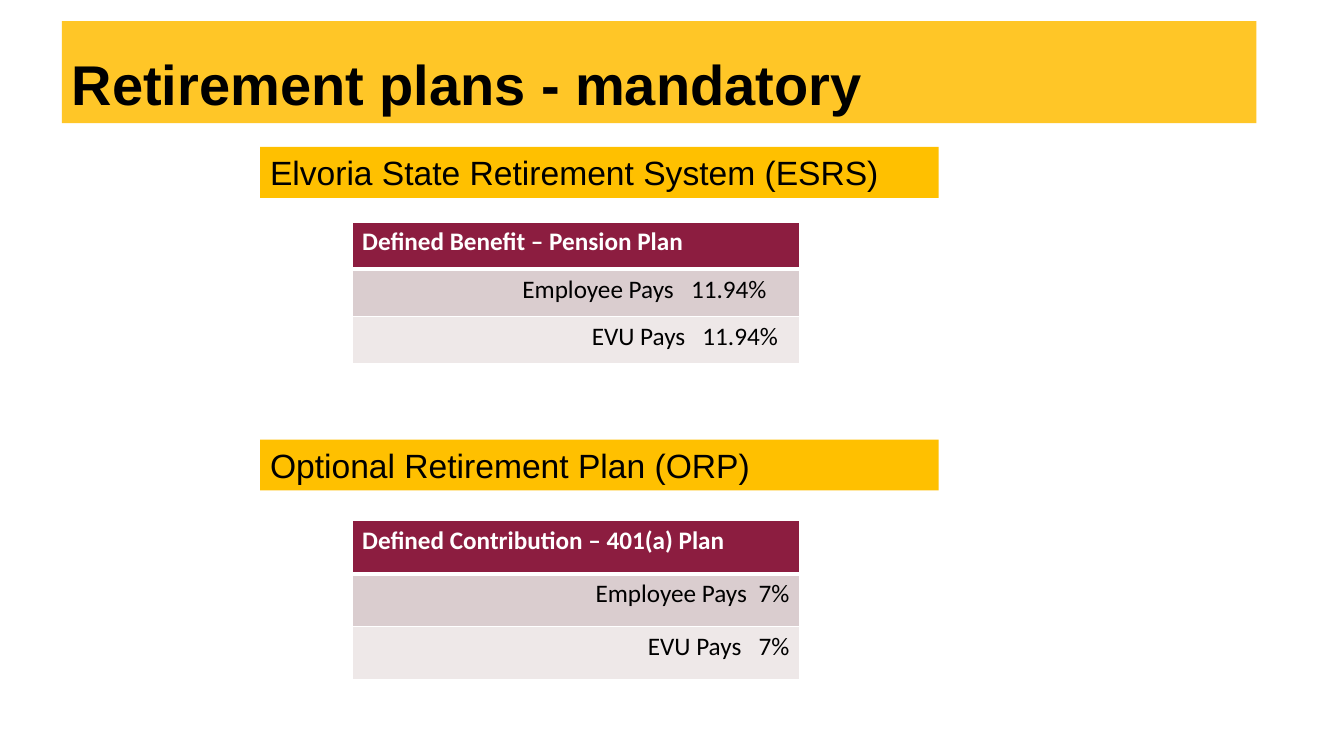
"""Build a slide that compares two mandatory retirement plans."""
from lxml import etree
from pptx import Presentation
from pptx.dml.color import RGBColor
from pptx.enum import shapes, text
from pptx.oxml import ns
from pptx.util import Pt


def tint(color, code):
    color.rgb = RGBColor.from_string(code)


def banner(left, top, width, height, words, size, fill):
    box = slide.shapes.add_shape(
        shapes.MSO_SHAPE.RECTANGLE, Pt(left), Pt(top), Pt(width), Pt(height))
    box.shadow.inherit = False
    box.fill.solid()
    tint(box.fill.fore_color, fill)
    box.line.fill.background()
    frame = box.text_frame
    frame.word_wrap = True
    frame.vertical_anchor = text.MSO_ANCHOR.TOP
    frame.text = words
    para = frame.paragraphs[0]
    para.alignment = text.PP_ALIGN.LEFT
    font = para.runs[0].font
    font.name, font.size = "Arial", Pt(size)
    tint(font.color, "000000")
    return para


deck = Presentation()
deck.slide_width, deck.slide_height = Pt(960), Pt(540)
slide = deck.slides.add_slide(deck.slide_layouts[6])

title = banner(44.2, 15.2, 853.2, 72.8, "Retirement plans - mandatory", 40, "FFC627")
title.line_spacing = Pt(65)
title.runs[0].font.bold = True

SPACE = 4.07
FILLS = ["8C1D40", "DACDCF", "EEE8E8"]
plans = [
    (105, "Elvoria State Retirement System (ESRS)", 158.5, 33.8,
     "Defined Benefit – Pension Plan",
     [("Employee Pays", "11.94%", 3, 4), ("EVU Pays", "11.94%", 3, 2)]),
    (314, "Optional Retirement Plan (ORP)", 371.8, 38,
     "Defined Contribution – 401(a) Plan",
     [("Employee Pays", "7%", 2, 0), ("EVU Pays", "7%", 3, 0)]),
]

for top, name, start, step, head, rates in plans:
    banner(185.8, top, 484.6, 36.4, name, 24, "FFC000")
    grid = slide.shapes.add_table(
        3, 1, Pt(251.5), Pt(start), Pt(319.5), Pt(3 * step)).table
    for row, fill in enumerate(FILLS):
        grid.rows[row].height = Pt(step)
        cell = grid.cell(row, 0)
        props = cell._tc.get_or_add_tcPr()
        widths = {"L": 1, "R": 1, "T": 3 if row == 1 else 1, "B": 3 if row == 0 else 1}
        for side, width in widths.items():
            edge = etree.SubElement(props, ns.qn("a:ln" + side), w=str(Pt(width)))
            solid = etree.SubElement(edge, ns.qn("a:solidFill"))
            etree.SubElement(solid, ns.qn("a:srgbClr"), val="FFFFFF")
        cell.fill.solid()
        tint(cell.fill.fore_color, fill)
        para = cell.text_frame.paragraphs[0]
        if row == 0:
            para.text = head
        else:
            label, rate, gap, pad = rates[row - 1]
            para.alignment = text.PP_ALIGN.RIGHT
            cell.margin_right = Pt(7.2 + pad * SPACE)
            for part in (label, " ", rate):
                para.add_run().text = part
            extra = round((gap - 1) * SPACE * 100)
            para.runs[1]._r.get_or_add_rPr().set("spc", str(extra))
        for run in para.runs:
            run.font.name, run.font.size = "Calibri", Pt(18)
            run.font.bold = row == 0
            tint(run.font.color, "FFFFFF" if row == 0 else "000000")

deck.save("out.pptx")
